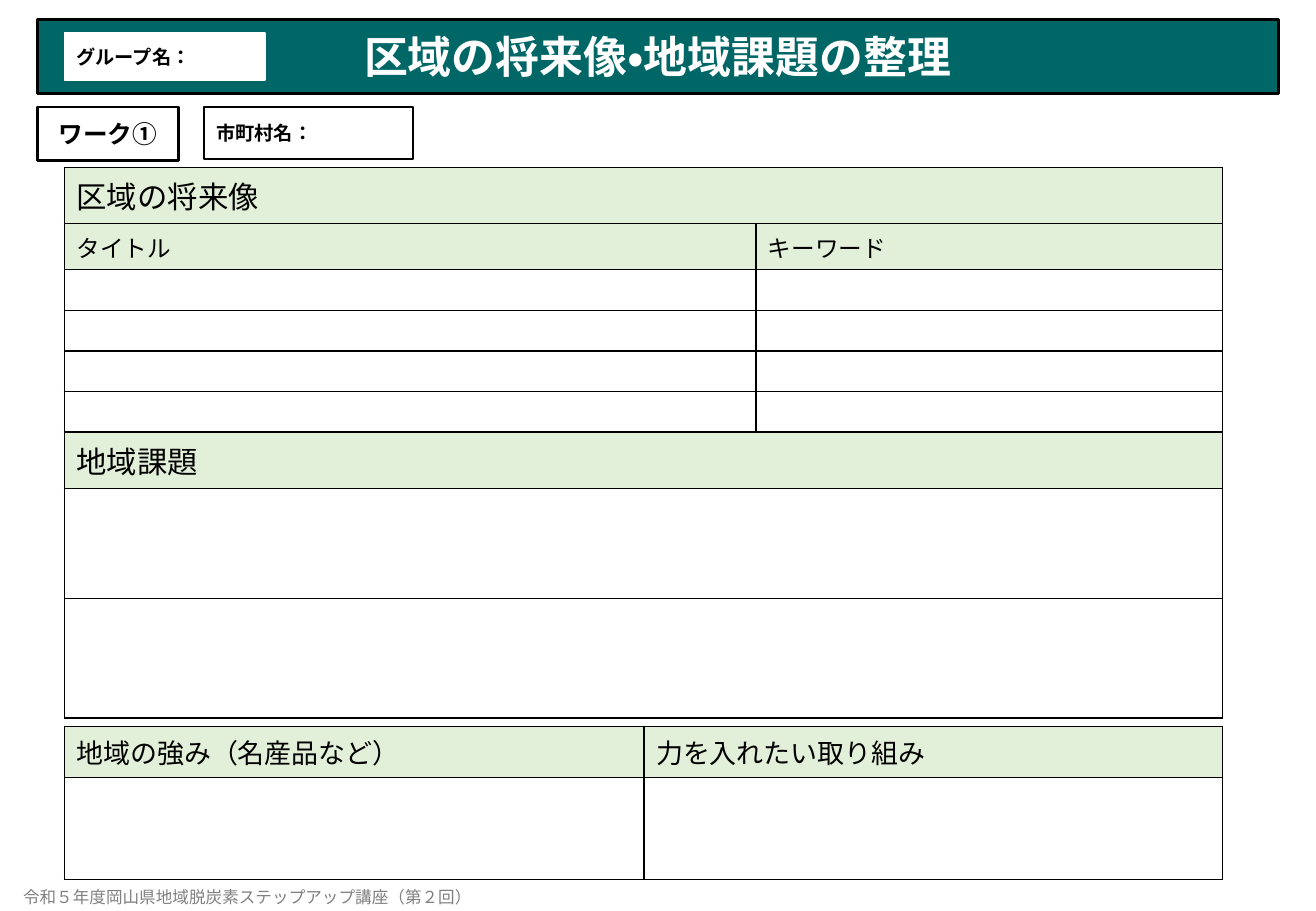
import lxml.etree
import pptx
import pptx.dml.color
import pptx.enum.lang
import pptx.enum.shapes
import pptx.enum.text
import pptx.oxml.ns
import pptx.util

Inches = pptx.util.Inches
Pt = pptx.util.Pt
ALIGN = pptx.enum.text.PP_ALIGN
MIDDLE = pptx.enum.text.MSO_ANCHOR.MIDDLE

COLORS = {
    "banner": "006666",
    "heading": "E2F0D9",
    "paper": "FFFFFF",
    "ink": "000000",
    "footer": "808080",
}
TABLE_LEFT, TABLE_WIDTH = 0.53, 9.53


def rgb(name):
    return pptx.dml.color.RGBColor.from_string(COLORS[name])


def write(frame, text, size, color="ink", bold=False, align=ALIGN.LEFT,
          font="Calibri", spacing=1.0):
    frame.word_wrap = True
    frame.text = text
    paragraph = frame.paragraphs[0]
    paragraph.alignment = align
    paragraph.line_spacing = spacing
    run_font = paragraph.runs[0].font
    run_font.name = font
    run_font.size = Pt(size)
    run_font.bold = bold
    run_font.color.rgb = rgb(color)
    run_font.language_id = pptx.enum.lang.MSO_LANGUAGE_ID.JAPANESE


def paint(shape, fill, line, line_width):
    shape.fill.solid()
    shape.fill.fore_color.rgb = rgb(fill)
    shape.line.color.rgb = rgb(line)
    shape.line.width = Pt(line_width)


def add_label(slide, box, text, size, line="ink", line_width=1.0, align=ALIGN.LEFT):
    label = slide.shapes.add_shape(
        pptx.enum.shapes.MSO_SHAPE.RECTANGLE, *map(Inches, box))
    label.shadow.inherit = False
    paint(label, "paper", line, line_width)
    label.text_frame.vertical_anchor = MIDDLE
    write(label.text_frame, text, size, bold=True, align=align)


def add_banner(slide, left, top, width, height):
    title = slide.shapes.title
    title.left, title.top = Inches(left), Inches(top)
    title.width, title.height = Inches(width), Inches(height)
    paint(title, "banner", "ink", 1.5)
    frame = title.text_frame
    frame.auto_size = pptx.enum.text.MSO_AUTO_SIZE.NONE
    frame.vertical_anchor = MIDDLE
    write(frame, "区域の将来像・地域課題の整理", 26, "paper", True, ALIGN.CENTER)
    add_label(slide, (left + 0.22, top + 0.11, 1.65, 0.39), "グループ名：", 11.4,
              line="paper")


def add_work_labels(slide, left, top):
    add_label(slide, (left, top, 1.16, 0.44), "ワーク①", 14.6,
              line_width=1.5, align=ALIGN.CENTER)
    add_label(slide, (left + 1.37, top, 1.72, 0.43), "市町村名：", 11.4)


def add_borders(cell):
    properties = cell._tc.get_or_add_tcPr()
    qn = pptx.oxml.ns.qn
    for place, side in enumerate(("a:lnL", "a:lnR", "a:lnT", "a:lnB")):
        border = lxml.etree.Element(qn(side), w=str(Pt(1)))
        fill = lxml.etree.SubElement(border, qn("a:solidFill"))
        lxml.etree.SubElement(fill, qn("a:srgbClr"), val=COLORS["ink"])
        properties.insert(place, border)


def add_worksheet(slide, top, columns, rows, headings):
    """Add a bordered table; headings maps a row to its (size, texts)."""
    table = slide.shapes.add_table(
        len(rows), len(columns), Inches(TABLE_LEFT), Inches(top),
        Inches(TABLE_WIDTH), Inches(sum(rows))).table
    table.first_row = table.horz_banding = False
    for column, width in zip(table.columns, columns):
        column.width = Inches(width)
    for r, height in enumerate(rows):
        table.rows[r].height = Inches(height)
        size, texts = headings.get(r, (None, ()))
        for c in range(len(columns)):
            cell = table.cell(r, c)
            cell.fill.solid()
            cell.fill.fore_color.rgb = rgb("heading" if texts else "paper")
            add_borders(cell)
            if c < len(texts):
                write(cell.text_frame, texts[c], size)
            elif not texts:
                cell.margin_top = cell.margin_bottom = 0
        if 0 < len(texts) < len(columns):
            table.cell(r, 0).merge(table.cell(r, len(columns) - 1))


def add_footer(slide, left, top, width, height):
    footer = slide.shapes.add_textbox(*map(Inches, (left, top, width, height)))
    frame = footer.text_frame
    frame.margin_left = frame.margin_right = Inches(0.08)
    frame.margin_top = frame.margin_bottom = Inches(0.04)
    frame.vertical_anchor = MIDDLE
    write(frame, "令和５年度岡山県地域脱炭素ステップアップ講座（第２回）", 9.8, "footer",
          font="Noto Sans CJK JP", spacing=0.9)


def main():
    deck = pptx.Presentation()
    deck.slide_width, deck.slide_height = Inches(10.83), Inches(7.5)
    slide = deck.slides.add_slide(deck.slide_layouts[5])
    add_banner(slide, 0.31, 0.16, 10.21, 0.61)
    add_work_labels(slide, 0.31, 0.88)
    add_footer(slide, 0.11, 7.21, 4.14, 0.37)
    add_worksheet(slide, 3.56, [TABLE_WIDTH], [0.46, 0.91, 0.98],
                  {0: (18, ["地域課題"])})
    add_worksheet(slide, 1.38, [5.69, 3.84], [0.46, 0.38] + [0.335] * 4,
                  {0: (18, ["区域の将来像"]), 1: (14, ["タイトル", "キーワード"])})
    add_worksheet(slide, 5.98, [4.77, 4.76], [0.42, 0.84],
                  {0: (16, ["地域の強み（名産品など）", "力を入れたい取り組み"])})
    deck.save("out.pptx")


if __name__ == "__main__":
    main()
